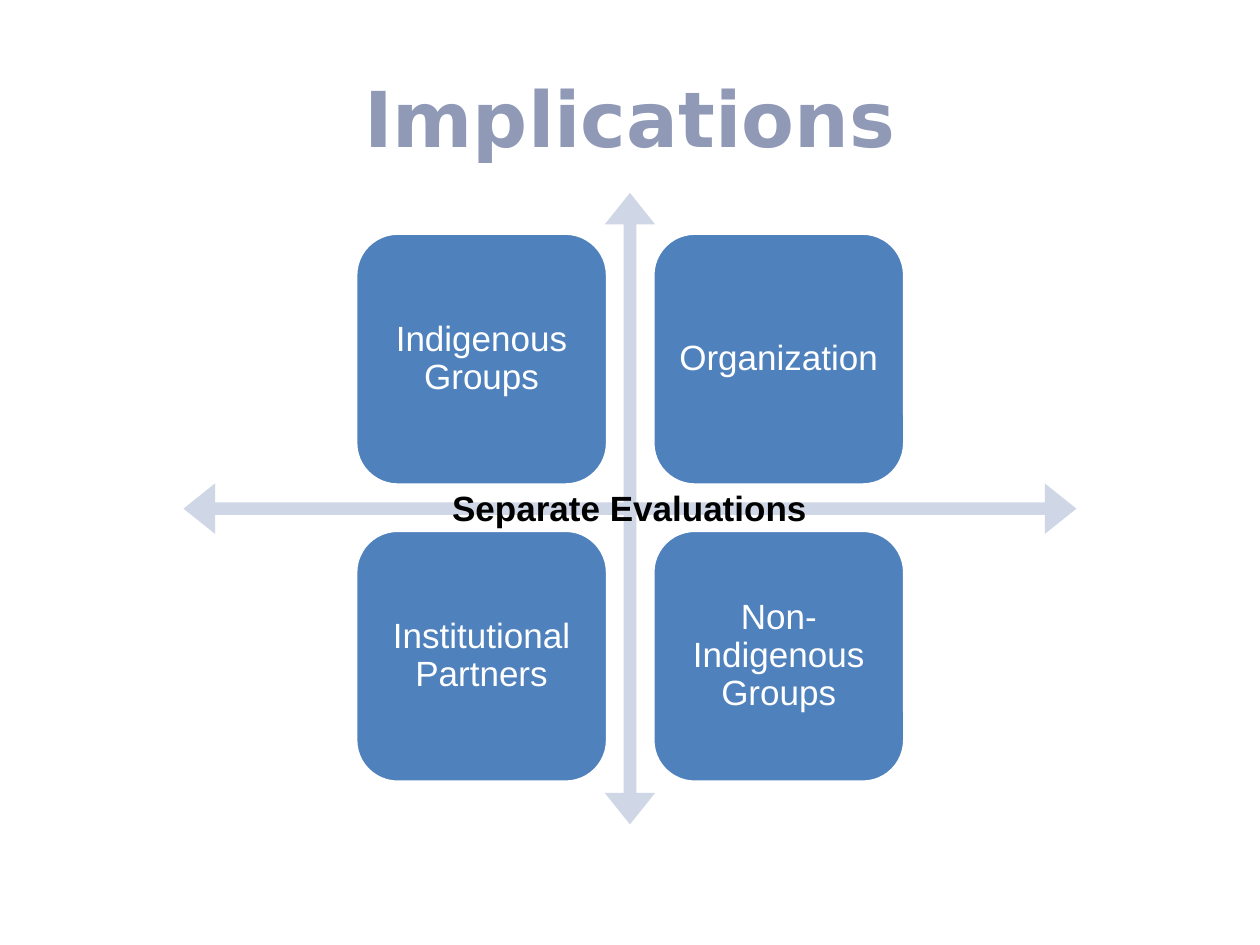
from pptx import Presentation
from pptx.dml.color import RGBColor
from pptx.enum.shapes import MSO_SHAPE
from pptx.enum.text import MSO_ANCHOR, PP_ALIGN
from pptx.util import Cm, Pt

WHITE = RGBColor(0xFF, 0xFF, 0xFF)
BLACK = RGBColor(0x00, 0x00, 0x00)
BLUE = RGBColor(0x4F, 0x81, 0xBD)
PALE_BLUE = RGBColor(0xCF, 0xD7, 0xE7)
GREY_BLUE = RGBColor(0x90, 0x9A, 0xB7)

GROUPS = [
    ["Indigenous Groups", "Organization"],
    ["Institutional Partners", "Non-Indigenous Groups"],
]
GRID_LEFT, GRID_TOP = 7.17, 4.7
SIDE, PITCH = 5.08, 5.99


def set_text(sp, text, size, color, margins, font="Arial", bold=False,
             anchor=MSO_ANCHOR.MIDDLE, spacing=None):
    """Fill sp with one centred paragraph; margins are (sides, top and bottom) in cm."""
    tf = sp.text_frame
    tf.word_wrap = True
    tf.vertical_anchor = anchor
    tf.margin_left = tf.margin_right = Cm(margins[0])
    tf.margin_top = tf.margin_bottom = Cm(margins[1])
    tf.text = text
    p = tf.paragraphs[0]
    p.alignment = PP_ALIGN.CENTER
    p.line_spacing = spacing
    f = p.runs[0].font
    f.name, f.size, f.bold = font, Pt(size), bold
    f.color.rgb = color


def add_label(s, text, left, top, width, height, **style):
    sp = s.shapes.add_textbox(Cm(left), Cm(top), Cm(width), Cm(height))
    set_text(sp, text, **style)


def add_filled(s, kind, left, top, width, height, fill, adjustments):
    sp = s.shapes.add_shape(kind, Cm(left), Cm(top), Cm(width), Cm(height))
    sp.shadow.inherit = False
    sp.fill.solid()
    sp.fill.fore_color.rgb = fill
    sp.line.fill.background()
    for i, value in enumerate(adjustments):
        sp.adjustments[i] = value
    return sp


def add_quadrant(s, text, row, col):
    sp = add_filled(s, MSO_SHAPE.ROUNDED_RECTANGLE, GRID_LEFT + col * PITCH,
                    GRID_TOP + row * PITCH, SIDE, SIDE, BLUE, [0.167])
    sp.line.color.rgb = WHITE
    sp.line.width = Pt(2)
    set_text(sp, text, 20, WHITE, (0.2, 0.2), spacing=0.9)


def main():
    prs = Presentation()
    prs.slide_width, prs.slide_height = Cm(25.4), Cm(19.05)
    s = prs.slides.add_slide(prs.slide_layouts[6])

    add_label(s, "Implications", 1.27, 0.76, 22.86, 3.18, size=44,
              color=GREY_BLUE, margins=(0.25, 0.25), font="DejaVu Sans", bold=True)
    add_filled(s, MSO_SHAPE.QUAD_ARROW, 3.7, 3.89, 18, 12.73, PALE_BLUE,
               [0.02, 0.04, 0.05])
    for row, names in enumerate(GROUPS):
        for col, name in enumerate(names):
            add_quadrant(s, name, row, col)
    add_label(s, "Separate Evaluations", 8.64, 9.68, 8.1, 1.12, size=20,
              color=BLACK, margins=(0.25, 0.13), bold=True, anchor=MSO_ANCHOR.TOP)

    prs.save("out.pptx")


if __name__ == "__main__":
    main()
